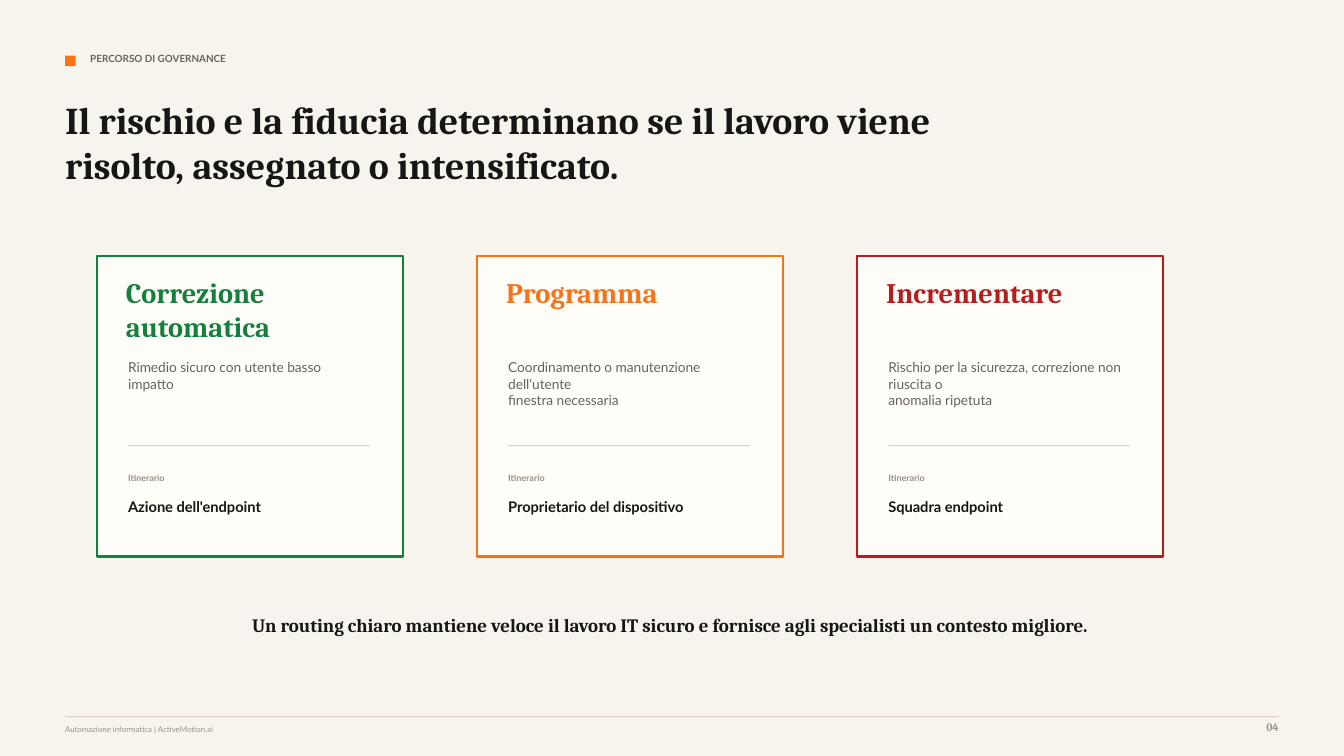
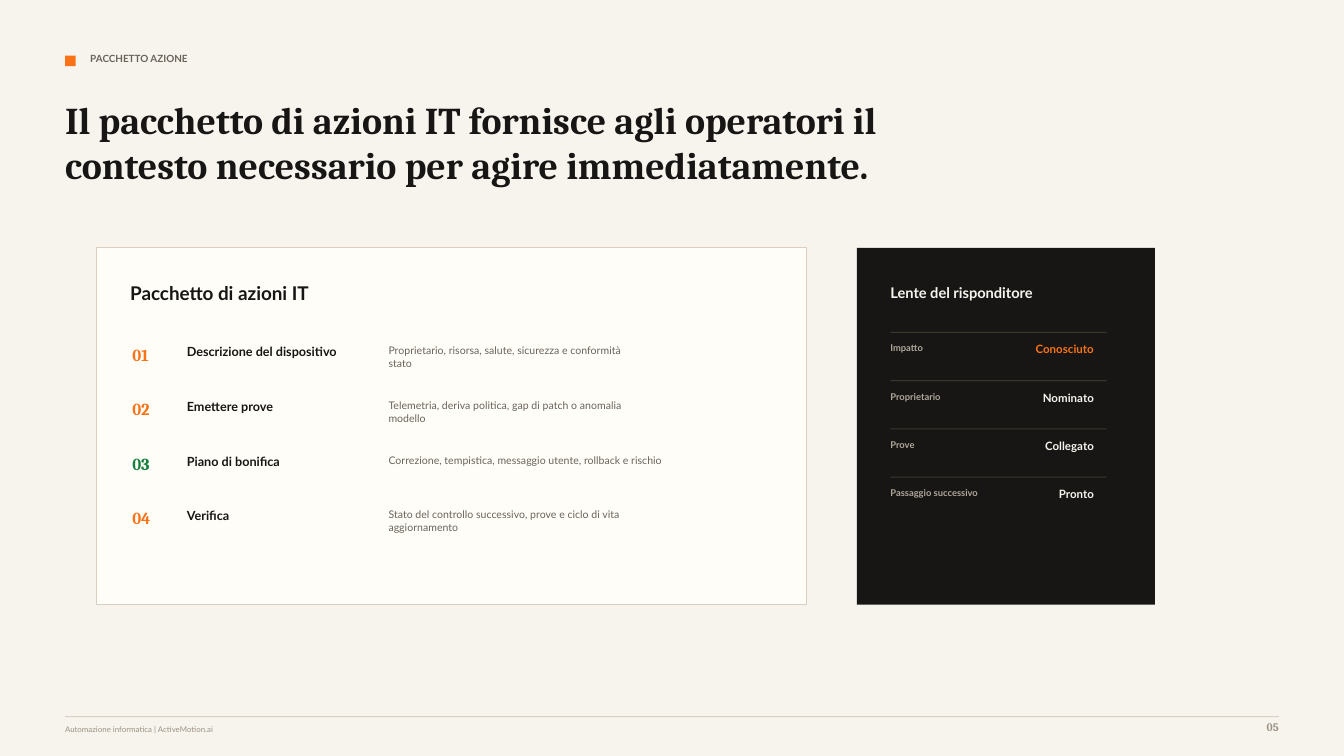
from pptx import Presentation
from pptx.dml.color import RGBColor
from pptx.enum.shapes import MSO_SHAPE
from pptx.enum.text import MSO_ANCHOR, MSO_AUTO_SIZE, PP_ALIGN
from pptx.util import Pt

PX = 9525
SLIDE_WIDTH, SLIDE_HEIGHT = 1280, 720
LEFT_MARGIN = 62
PANEL_LEFT = 92
RIGHT_PANEL_LEFT = 816
TITLE_ONLY_LAYOUT = 5

RECTANGLE = MSO_SHAPE.RECTANGLE
TOP = MSO_ANCHOR.TOP
NO_AUTOFIT = MSO_AUTO_SIZE.NONE
LEFT, CENTER, RIGHT = PP_ALIGN.LEFT, PP_ALIGN.CENTER, PP_ALIGN.RIGHT

SERIF = "Cambria"
SANS = "Lato"

CREAM = RGBColor(0xF7, 0xF4, 0xEE)
IVORY = RGBColor(0xFF, 0xFD, 0xF8)
INK = RGBColor(0x17, 0x16, 0x14)
GRAY = RGBColor(0x69, 0x63, 0x5A)
MUTED = RGBColor(0x9A, 0x91, 0x84)
SAND = RGBColor(0xD9, 0xD0, 0xC3)
STONE = RGBColor(0xAF, 0xA7, 0x9B)
DARK_RULE = RGBColor(0x3C, 0x36, 0x2E)
ORANGE = RGBColor(0xF9, 0x73, 0x16)
GREEN = RGBColor(0x15, 0x80, 0x3D)
RED = RGBColor(0xB9, 0x1C, 0x1C)

FOOTER = "Automazione informatica | ActiveMotion.ai"

ROUTES = [
    ("Correzione automatica", GREEN,
     "Rimedio sicuro con utente basso\nimpatto",
     "Azione dell'endpoint"),
    ("Programma", ORANGE,
     "Coordinamento o manutenzione dell'utente\nfinestra necessaria",
     "Proprietario del dispositivo"),
    ("Incrementare", RED,
     "Rischio per la sicurezza, correzione non riuscita o\nanomalia ripetuta",
     "Squadra endpoint"),
]

PACKAGE_ITEMS = [
    ("Descrizione del dispositivo", ORANGE,
     "Proprietario, risorsa, salute, sicurezza e conformità\nstato"),
    ("Emettere prove", ORANGE,
     "Telemetria, deriva politica, gap di patch o anomalia\nmodello"),
    ("Piano di bonifica", GREEN,
     "Correzione, tempistica, messaggio utente, rollback e rischio"),
    ("Verifica", ORANGE,
     "Stato del controllo successivo, prove e ciclo di vita\naggiornamento"),
]

LENS_ITEMS = [
    ("Impatto", "Conosciuto", ORANGE),
    ("Proprietario", "Nominato", CREAM),
    ("Prove", "Collegato", CREAM),
    ("Passaggio successivo", "Pronto", CREAM),
]


def place(shape, left, top, width, height):
    shape.left, shape.top = left * PX, top * PX
    shape.width, shape.height = width * PX, height * PX


def write(shape, text, size, color, font=SANS, bold=True, align=LEFT):
    """Fill a shape with unpadded text, one paragraph per line."""
    frame = shape.text_frame
    frame.text = text
    frame.word_wrap = True
    frame.auto_size = NO_AUTOFIT
    frame.vertical_anchor = TOP
    frame.margin_left = frame.margin_right = 0
    frame.margin_top = frame.margin_bottom = 0
    for paragraph in frame.paragraphs:
        paragraph.alignment = align
        for run in paragraph.runs:
            run.font.name = font
            run.font.size = Pt(size)
            run.font.bold = bold
            run.font.color.rgb = color


def add_text(slide, box, text, size, color, **style):
    left, top, width, height = (length * PX for length in box)
    shape = slide.shapes.add_textbox(left, top, width, height)
    write(shape, text, size, color, **style)


def add_rectangle(slide, box, fill, outline=None, outline_width=0.75):
    left, top, width, height = (length * PX for length in box)
    shape = slide.shapes.add_shape(RECTANGLE, left, top, width, height)
    shape.shadow.inherit = False
    shape.fill.solid()
    shape.fill.fore_color.rgb = fill
    if outline is None:
        shape.line.fill.background()
    else:
        shape.line.color.rgb = outline
        shape.line.width = Pt(outline_width)


def add_rule(slide, left, top, width, color=SAND):
    add_rectangle(slide, (left, top, width, 1), color)


def add_framed_slide(presentation, section, title, number):
    """Add a slide with the shared background, header and footer."""
    layout = presentation.slide_layouts[TITLE_ONLY_LAYOUT]
    slide = presentation.slides.add_slide(layout)
    slide.background.fill.solid()
    slide.background.fill.fore_color.rgb = CREAM

    add_rectangle(slide, (LEFT_MARGIN, 53, 10, 10), ORANGE)
    add_text(slide, (86, 50, 620, 18), section, 7.12, GRAY)
    place(slide.shapes.title, LEFT_MARGIN, 92, 900, 98)
    write(slide.shapes.title, title, 27, INK, font=SERIF)

    add_rule(slide, LEFT_MARGIN, 682, SLIDE_WIDTH - 2 * LEFT_MARGIN)
    add_text(slide, (LEFT_MARGIN, 690, 760, 14), FOOTER, 5.6, MUTED, bold=False)
    add_text(slide, (1170, 686, 48, 18), f"{number:02}", 8.25, MUTED,
             font=SERIF, align=RIGHT)
    return slide


def add_route_card(slide, left, name, color, description, route):
    """Add a card whose title box has room for two lines."""
    inner_left = left + 30
    add_rectangle(slide, (left, 244, 292, 286), IVORY, color, 1.5)
    add_text(slide, (left + 28, 262, 220, 68), name, 20.25, color, font=SERIF)
    add_text(slide, (inner_left, 342, 228, 50), description, 9.75, GRAY, bold=False)
    add_rule(slide, inner_left, 424, 230)
    add_text(slide, (inner_left, 450, 160, 14), "Itinerario", 6.4, MUTED)
    add_text(slide, (inner_left, 474, 220, 22), route, 10.5, INK)


def add_package_panel(slide):
    add_rectangle(slide, (PANEL_LEFT, 236, 676, 340), IVORY, SAND)
    add_text(slide, (124, 268, 300, 24), "Pacchetto di azioni IT", 13.5, INK)
    for index, (name, color, description) in enumerate(PACKAGE_ITEMS):
        top = 328 + 52 * index
        add_text(slide, (126, top, 34, 24), f"{index + 1:02}", 12, color, font=SERIF)
        add_text(slide, (178, top, 174, 18), name, 9, INK)
        add_text(slide, (370, top, 320, 30), description, 7.5, GRAY, bold=False)


def add_lens_panel(slide):
    inner_left = RIGHT_PANEL_LEFT + 32
    add_rectangle(slide, (RIGHT_PANEL_LEFT, 236, 284, 340), INK)
    add_text(slide, (inner_left, 270, 160, 20), "Lente del risponditore", 10.5, CREAM)
    for index, (label, value, color) in enumerate(LENS_ITEMS):
        top = 316 + 46 * index
        add_rule(slide, inner_left, top, 206, DARK_RULE)
        add_text(slide, (inner_left, top + 10, 92, 16), label, 6.75, STONE)
        add_text(slide, (960, top + 10, 82, 16), value, 8.25, color, align=RIGHT)


def add_governance_slide(presentation):
    slide = add_framed_slide(
        presentation, "PERCORSO DI GOVERNANCE",
        "Il rischio e la fiducia determinano se il lavoro viene risolto, "
        "assegnato o intensificato.", 4)
    card_step = (RIGHT_PANEL_LEFT - PANEL_LEFT) // (len(ROUTES) - 1)
    for index, route in enumerate(ROUTES):
        add_route_card(slide, PANEL_LEFT + card_step * index, *route)
    add_text(slide, (188, 584, 900, 28),
             "Un routing chiaro mantiene veloce il lavoro IT sicuro e fornisce "
             "agli specialisti un contesto migliore.",
             13.5, INK, font=SERIF, align=CENTER)


def add_package_slide(presentation):
    slide = add_framed_slide(
        presentation, "PACCHETTO AZIONE",
        "Il pacchetto di azioni IT fornisce agli operatori il contesto "
        "necessario per agire immediatamente.", 5)
    add_package_panel(slide)
    add_lens_panel(slide)


def main():
    presentation = Presentation()
    presentation.slide_width = SLIDE_WIDTH * PX
    presentation.slide_height = SLIDE_HEIGHT * PX
    add_governance_slide(presentation)
    add_package_slide(presentation)
    presentation.save("out.pptx")


if __name__ == "__main__":
    main()
